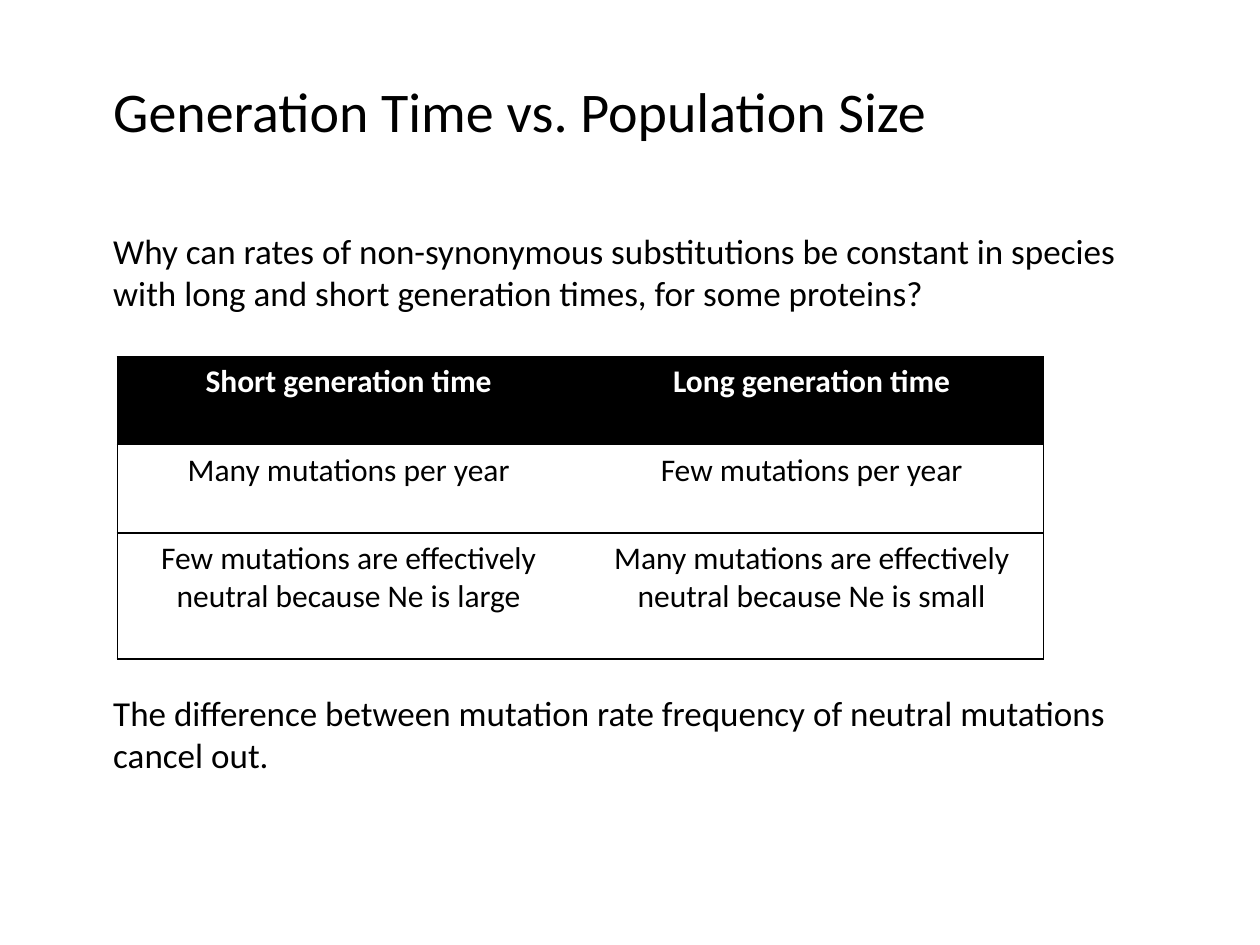
from typing import NamedTuple

from pptx import Presentation
from pptx.dml.color import RGBColor as RGB
from pptx.enum.text import MSO_ANCHOR as Anchor, PP_ALIGN as Align
from pptx.oxml import parse_xml
from pptx.oxml.ns import nsdecls
from pptx.util import Inches, Pt

BLACK = RGB(0, 0, 0)
WHITE = RGB(255, 255, 255)
FONT = "Calibri"


class Block(NamedTuple):
    left: float
    top: float
    width: float
    height: float
    size: int
    anchor: Anchor
    gap: int
    lines: tuple[str, ...]


class Row(NamedTuple):
    height: float
    cells: tuple[str, str]


TITLE = Block(0.8, 0.25, 8.95, 1.25, 32, Anchor.MIDDLE, 0,
              ("Generation Time vs. Population Size",))
BODY = Block(0.8, 1.77, 8.42, 4.48, 20, Anchor.TOP, 216, (
    "Why can rates of non-synonymous substitutions be constant in species "
    "with long and short generation times, for some proteins?",
    "The difference between mutation rate frequency of neutral mutations cancel out.",
))
ROWS = (
    Row(0.7, ("Short generation time", "Long generation time")),
    Row(0.7, ("Many mutations per year", "Few mutations per year")),
    Row(1.0, ("Few mutations are effectively neutral because Ne is large",
              "Many mutations are effectively neutral because Ne is small")),
)


def add_run(para, text: str, size: int, color: RGB, bold: bool = False) -> None:
    run = para.add_run()
    run.text = text
    font = run.font
    font.name, font.size, font.bold = FONT, Pt(size), bold
    font.color.rgb = color


def add_block(slide, block: Block) -> None:
    box = slide.shapes.add_textbox(Inches(block.left), Inches(block.top),
                                   Inches(block.width), Inches(block.height))
    frame = box.text_frame
    frame.word_wrap = True
    frame.vertical_anchor = block.anchor
    for i, line in enumerate(block.lines):
        para = frame.add_paragraph() if i else frame.paragraphs[0]
        if i:
            para.space_before = Pt(block.gap)
        add_run(para, line, block.size, BLACK)


def add_edges(cell, shown: str) -> None:
    props = cell._tc.get_or_add_tcPr()
    for side in "LRTB":
        fill = (f'<a:solidFill><a:srgbClr val="{BLACK}"/></a:solidFill>'
                if side in shown else "<a:noFill/>")
        props.append(parse_xml(
            f'<a:ln{side} {nsdecls("a")} w="{Pt(0.75)}">{fill}</a:ln{side}>'))


def add_grid(slide, rows: tuple[Row, ...]) -> None:
    shape = slide.shapes.add_table(
        len(rows), 2, Inches(0.93), Inches(2.83), Inches(7.35),
        Inches(sum(row.height for row in rows)))
    table = shape.table
    table.horz_banding = False
    for r, row in enumerate(rows):
        table.rows[r].height = Inches(row.height)
        head = r == 0
        for c, text in enumerate(row.cells):
            cell = table.cell(r, c)
            add_edges(cell, "TB" + "LR"[c])
            if head:
                cell.fill.solid()
                cell.fill.fore_color.rgb = BLACK
            else:
                cell.fill.background()
            para = cell.text_frame.paragraphs[0]
            para.alignment = Align.CENTER
            add_run(para, text, 18, WHITE if head else BLACK, head)


def main() -> None:
    """Build the slide on generation time and population size."""
    deck = Presentation()
    deck.slide_width, deck.slide_height = Inches(10), Inches(7.5)
    slide = deck.slides.add_slide(deck.slide_layouts[6])
    for block in (TITLE, BODY):
        add_block(slide, block)
    add_grid(slide, ROWS)
    deck.save("out.pptx")


if __name__ == "__main__":
    main()
